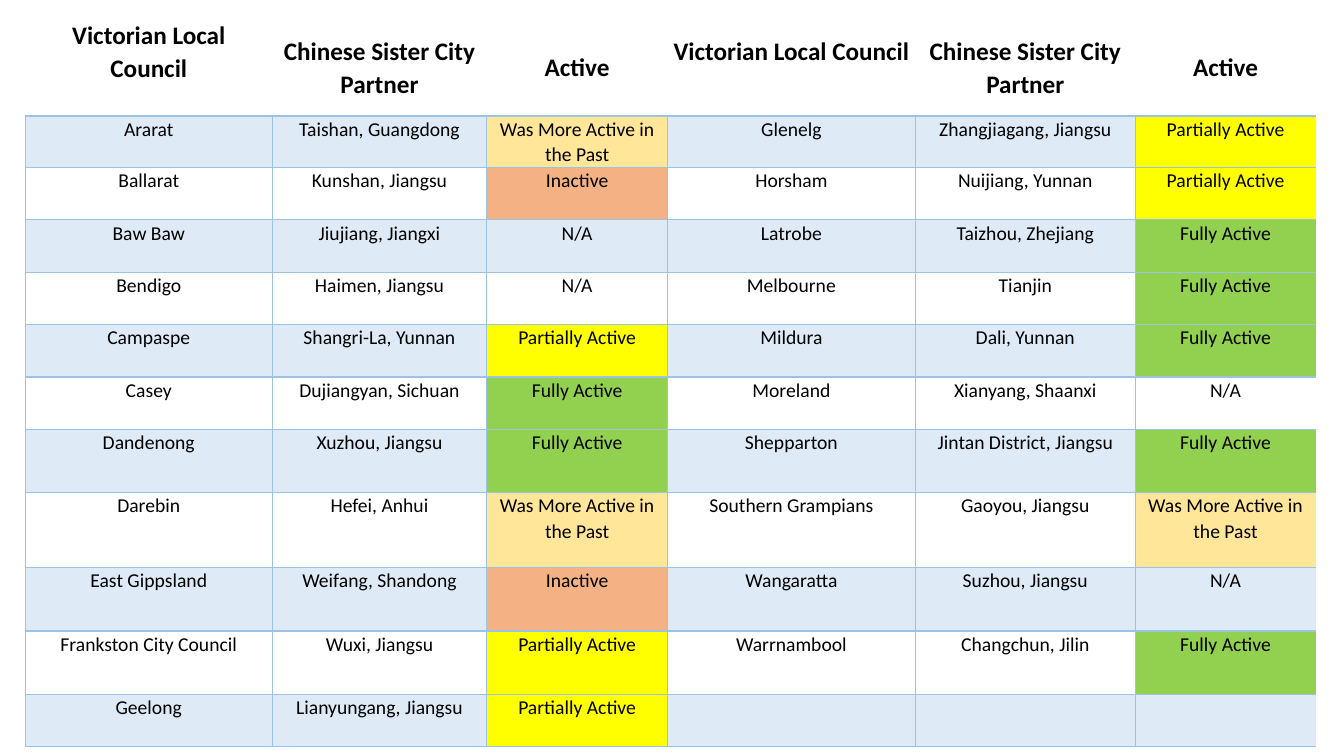
import pptx
import pptx.util
import pptx.dml.color
import pptx.enum.text
import lxml.etree

Cm = pptx.util.Cm
Pt = pptx.util.Pt
RGBColor = pptx.dml.color.RGBColor

BLACK = RGBColor(0x00, 0x00, 0x00)
WHITE = RGBColor(0xFF, 0xFF, 0xFF)
BAND = RGBColor(0xDE, 0xEA, 0xF6)
BORDER = RGBColor(0x9C, 0xC2, 0xE5)
YELLOW = RGBColor(0xFF, 0xFF, 0x00)
GREEN = RGBColor(0x92, 0xD0, 0x50)
SAND = RGBColor(0xFF, 0xE6, 0x99)
ORANGE = RGBColor(0xF4, 0xB1, 0x83)

PAST = "Was More Active in the Past"
PARTIAL = "Partially Active"
FULL = "Fully Active"
INACTIVE = "Inactive"
STATUS_FILLS = {PAST: SAND, PARTIAL: YELLOW, FULL: GREEN, INACTIVE: ORANGE}

HEADINGS = ("Victorian Local Council", "Chinese Sister City Partner", "Active")
ROWS = [
    HEADINGS * 2,
    ("Ararat", "Taishan, Guangdong", PAST, "Glenelg", "Zhangjiagang, Jiangsu", PARTIAL),
    ("Ballarat", "Kunshan, Jiangsu", INACTIVE, "Horsham", "Nuijiang, Yunnan", PARTIAL),
    ("Baw Baw", "Jiujiang, Jiangxi", "N/A", "Latrobe", "Taizhou, Zhejiang", FULL),
    ("Bendigo", "Haimen, Jiangsu", "N/A", "Melbourne", "Tianjin", FULL),
    ("Campaspe", "Shangri-La, Yunnan", PARTIAL, "Mildura", "Dali, Yunnan", FULL),
    ("Casey", "Dujiangyan, Sichuan", FULL, "Moreland", "Xianyang, Shaanxi", "N/A"),
    ("Dandenong", "Xuzhou, Jiangsu", FULL, "Shepparton", "Jintan District, Jiangsu", FULL),
    ("Darebin", "Hefei, Anhui", PAST, "Southern Grampians", "Gaoyou, Jiangsu", PAST),
    ("East Gippsland", "Weifang, Shandong", INACTIVE, "Wangaratta", "Suzhou, Jiangsu", "N/A"),
    ("Frankston City Council", "Wuxi, Jiangsu", PARTIAL, "Warrnambool", "Changchun, Jilin", FULL),
    ("Geelong", "Lianyungang, Jiangsu", PARTIAL, "", "", ""),
]
COL_WIDTHS = (6.22, 5.41, 4.55, 6.25, 5.54, 4.55)
ROW_HEIGHTS = (2.42, 1.3, 1.32, 1.32, 1.32, 1.32, 1.32, 1.59, 1.89, 1.6, 1.6, 1.32)
NO_GRID_STYLE = "{2D5ABB26-0587-4C30-8999-92F81FD0307C}"


def add_border(cell, side, width):
    ns = pptx.oxml.ns.qn
    ln = lxml.etree.SubElement(cell._tc.get_or_add_tcPr(), ns("a:ln" + side))
    ln.set("w", str(Pt(width)))
    fill = lxml.etree.SubElement(ln, ns("a:solidFill"))
    lxml.etree.SubElement(fill, ns("a:srgbClr")).set("val", str(BORDER))


prs = pptx.Presentation()
prs.slide_width = Cm(33.87)
prs.slide_height = Cm(19.05)
s = prs.slides.add_slide(prs.slide_layouts[6])

frame = s.shapes.add_table(len(ROWS), len(COL_WIDTHS), Cm(0.64), Cm(0.46),
                           Cm(sum(COL_WIDTHS)), Cm(sum(ROW_HEIGHTS)))
table = frame.table
table._tbl.tblPr.find(pptx.oxml.ns.qn("a:tableStyleId")).text = NO_GRID_STYLE

for column, width in zip(table.columns, COL_WIDTHS):
    column.width = Cm(width)
for row, height in zip(table.rows, ROW_HEIGHTS):
    row.height = Cm(height)

for i, texts in enumerate(ROWS):
    header = i == 0
    for j, text in enumerate(texts):
        cell = table.cell(i, j)
        cell.margin_left = cell.margin_right = Cm(0.15)
        cell.margin_top = cell.margin_bottom = 0

        if header:
            cell.vertical_anchor = pptx.enum.text.MSO_ANCHOR.MIDDLE
            if j % 3 == 0:
                cell.margin_bottom = Cm(0.8)
            add_border(cell, "B", 1.5)
        else:
            add_border(cell, "L", 1)
            if j < len(COL_WIDTHS) - 1:
                add_border(cell, "R", 1)
            add_border(cell, "T", 1.5 if i == 1 else 1)
            add_border(cell, "B", 1)

        cell.fill.solid()
        cell.fill.fore_color.rgb = STATUS_FILLS.get(text, BAND if i % 2 else WHITE)

        if text:
            p = cell.text_frame.paragraphs[0]
            p.alignment = pptx.enum.text.PP_ALIGN.CENTER
            p.line_spacing = 1.07
            p.space_after = Pt(8)
            r = p.add_run()
            r.text = text
            r.font.name = "Calibri"
            r.font.size = Pt(18 if header else 14)
            r.font.bold = header
            r.font.color.rgb = BLACK

prs.save("out.pptx")
